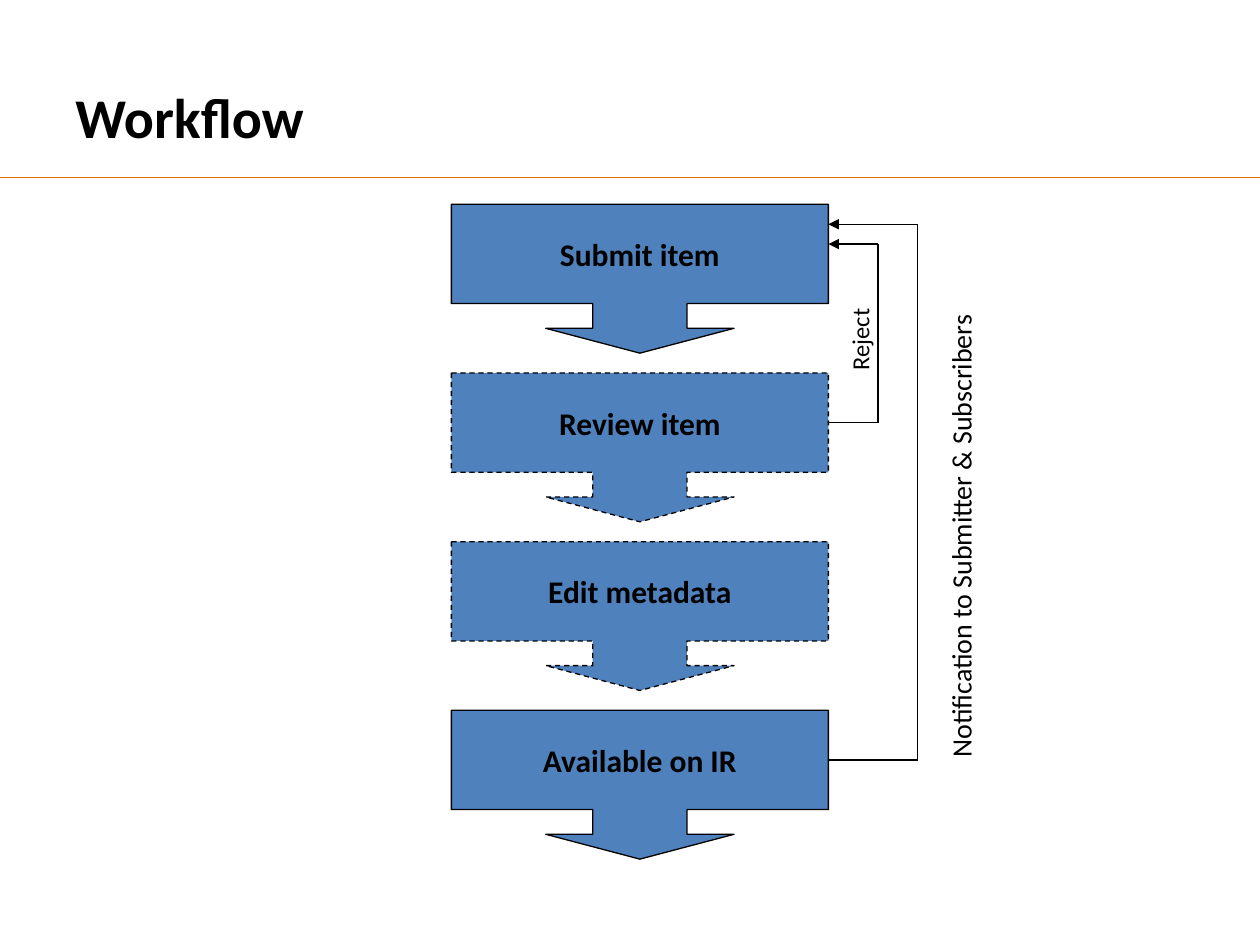
from lxml import etree
from pptx import Presentation
from pptx.dml.color import RGBColor
from pptx.enum.dml import MSO_LINE_DASH_STYLE as Dash
from pptx.enum.shapes import MSO_CONNECTOR_TYPE as Connector, MSO_SHAPE as Shape
from pptx.enum.text import MSO_ANCHOR as Anchor, PP_ALIGN as Align
from pptx.oxml.ns import qn
from pptx.util import Cm, Pt


def color(value):
    return RGBColor.from_string(value)


def write(shape, text, size, bold=False):
    shape.text_frame.text = text
    font = shape.text_frame.paragraphs[0].runs[0].font
    font.name = "Calibri"
    font.size = Pt(size)
    font.bold = bold
    font.color.rgb = color("000000")


presentation = Presentation()
presentation.slide_width = Cm(25.4)
presentation.slide_height = Cm(19.05)
slide = presentation.slides.add_slide(presentation.slide_layouts[6])

title = slide.shapes.add_textbox(Cm(1.27), Cm(0.76), Cm(22.86), Cm(3.18))
title.text_frame.word_wrap = True
title.text_frame.vertical_anchor = Anchor.MIDDLE
write(title, "Workflow", 32, bold=True)

step_left, step_top, step_width, step_height, pitch = 9.1, 4.12, 7.6, 3, 3.4
step_right = step_left + step_width
steps = [("Submit item", False), ("Review item", True), ("Edit metadata", True), ("Available on IR", False)]
for row, (text, optional) in enumerate(steps):
    step = slide.shapes.add_shape(
        Shape.DOWN_ARROW_CALLOUT,
        Cm(step_left), Cm(step_top + row * pitch), Cm(step_width), Cm(step_height),
    )
    for index, value in enumerate([0.633, 0.633, 0.167, 0.667]):
        step.adjustments[index] = value
    step.shadow.inherit = False
    step.fill.solid()
    step.fill.fore_color.rgb = color("4F81BD")
    step.line.color.rgb = color("000000")
    step.line.width = Pt(0.75)
    if optional:
        step.line.dash_style = Dash.DASH
    step.text_frame.word_wrap = False
    step.text_frame.vertical_anchor = Anchor.MIDDLE
    write(step, text, 18, bold=True)
    step.text_frame.paragraphs[0].alignment = Align.CENTER

lines = [(0, 3.58, 25.4, 3.58, "E46C0A", False)]
for row, turn, entry in [(1, 17.7, 0.8), (3, 18.5, 0.4)]:
    start = step_top + row * pitch + 1
    end = step_top + entry
    lines += [
        (step_right, start, turn, start, "000000", False),
        (turn, start, turn, end, "000000", False),
        (turn, end, step_right, end, "000000", True),
    ]
for x1, y1, x2, y2, line_color, has_arrow in lines:
    line = slide.shapes.add_connector(Connector.STRAIGHT, Cm(x1), Cm(y1), Cm(x2), Cm(y2))
    line.line.color.rgb = color(line_color)
    line.line.width = Pt(0.75)
    if has_arrow:
        etree.SubElement(line.line._get_or_add_ln(), qn("a:tailEnd"), type="triangle")
    etree.SubElement(line._element.spPr, qn("a:effectLst"))

labels = [
    ("Reject", 14, 16.23, 6.2, 2.2, 0.84),
    ("Notification to Submitter & Subscribers", 16, 13.77, 9.45, 11.2, 0.94),
]
for text, size, left, top, width, height in labels:
    label = slide.shapes.add_textbox(Cm(left), Cm(top), Cm(width), Cm(height))
    label.rotation = 270
    label.text_frame.word_wrap = True
    write(label, text, size)

presentation.save("out.pptx")
